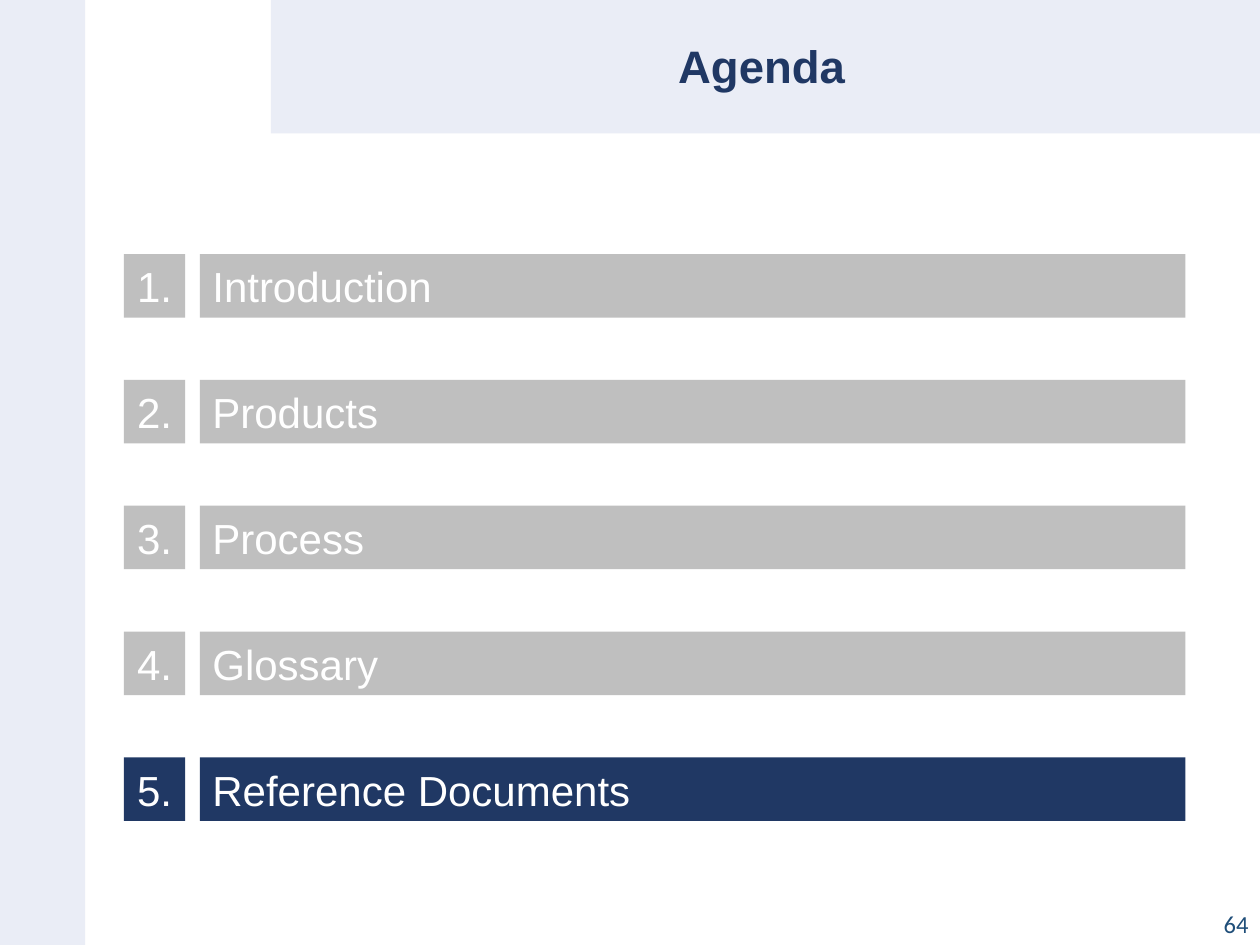
from dataclasses import dataclass

from pptx import Presentation
from pptx.dml.color import RGBColor
from pptx.enum.shapes import MSO_SHAPE as Shape
from pptx.enum.text import MSO_ANCHOR as Anchor, PP_ALIGN as Align
from pptx.util import Pt


@dataclass(frozen=True)
class Theme:
    """Colours, fonts and type sizes of the slide."""
    band: str = "EAEDF6"
    inactive: str = "BFBFBF"
    active: str = "203864"
    on_bar: str = "FFFFFF"
    page: str = "1F4E79"
    font: str = "Arial"
    page_font: str = "Calibri"
    title_size: int = 26
    item_size: int = 24
    page_size: int = 14


THEME = Theme()
AGENDA = ["Introduction", "Products", "Process", "Glossary", "Reference Documents"]
CURRENT = 5
FIRST_TOP, PITCH, BAR_HEIGHT = 145.2, 71.9, 36.3


def add_block(slide, left, top, width, height, color):
    """Add a plain filled rectangle."""
    shape = slide.shapes.add_shape(
        Shape.RECTANGLE, Pt(left), Pt(top), Pt(width), Pt(height))
    shape.shadow.inherit = False
    shape.fill.solid()
    shape.fill.fore_color.rgb = RGBColor.from_string(color)
    shape.line.fill.background()
    return shape


def write(shape, text, *, size, color, font=THEME.font, bold=False,
          align=Align.LEFT, anchor=Anchor.MIDDLE, spacing=None):
    """Put one formatted paragraph into a shape."""
    frame = shape.text_frame
    frame.word_wrap = True
    frame.vertical_anchor = anchor
    paragraph = frame.paragraphs[0]
    paragraph.alignment = align
    paragraph.line_spacing = spacing
    run = paragraph.add_run()
    run.text = text
    run.font.name = font
    run.font.size = Pt(size)
    run.font.bold = bold
    run.font.color.rgb = RGBColor.from_string(color)


def add_text(slide, left, top, width, height, text, **style):
    """Add a text box with one formatted paragraph."""
    box = slide.shapes.add_textbox(Pt(left), Pt(top), Pt(width), Pt(height))
    write(box, text, **style)


def add_agenda_row(slide, number, label):
    """Add the number block and the label bar of one agenda item."""
    top = FIRST_TOP + (number - 1) * PITCH
    color = THEME.active if number == CURRENT else THEME.inactive
    style = {"size": THEME.item_size, "color": THEME.on_bar}
    bar = add_block(slide, 114.3, top, 563.2, BAR_HEIGHT, color)
    write(bar, label, **style)
    block = add_block(slide, 70.8, top, 35.1, BAR_HEIGHT, color)
    write(block, f"{number}.", align=Align.CENTER, **style)


def main():
    """Build the agenda slide and save it."""
    presentation = Presentation()
    presentation.slide_width, presentation.slide_height = Pt(720), Pt(540)
    slide = presentation.slides.add_slide(presentation.slide_layouts[6])

    add_block(slide, 0, 0, 48.6, 540, THEME.band)
    add_block(slide, 154.8, 0, 565.2, 76.3, THEME.band)
    add_text(slide, 150.5, 1.4, 569.5, 76.3, "Agenda", size=THEME.title_size,
             color=THEME.active, bold=True, align=Align.CENTER, spacing=0.9)
    add_text(slide, 558.5, 511.2, 162, 28.8, "64", size=THEME.page_size,
             color=THEME.page, font=THEME.page_font, align=Align.RIGHT,
             anchor=Anchor.BOTTOM)
    for number, label in enumerate(AGENDA, start=1):
        add_agenda_row(slide, number, label)

    presentation.save("out.pptx")


if __name__ == "__main__":
    main()
